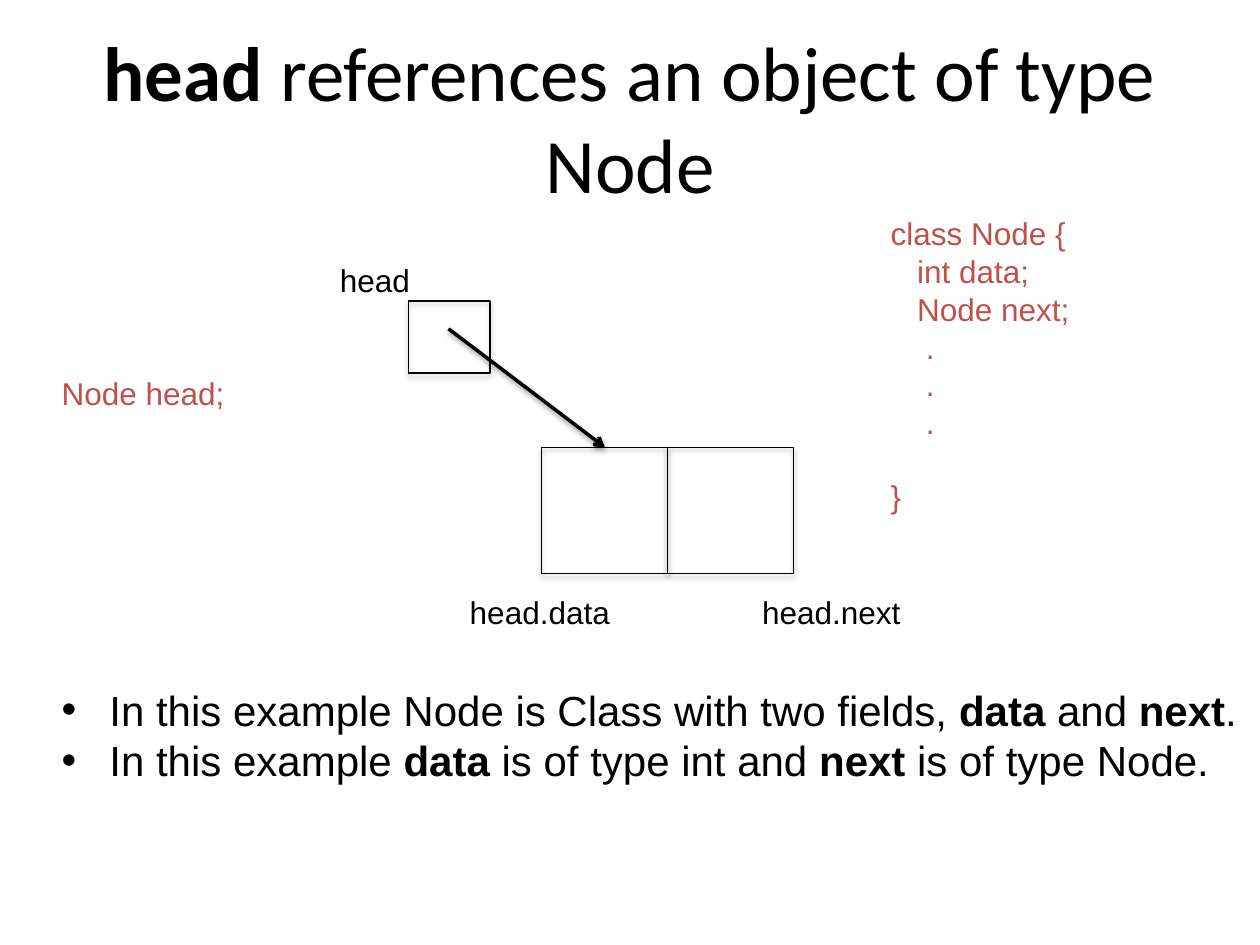
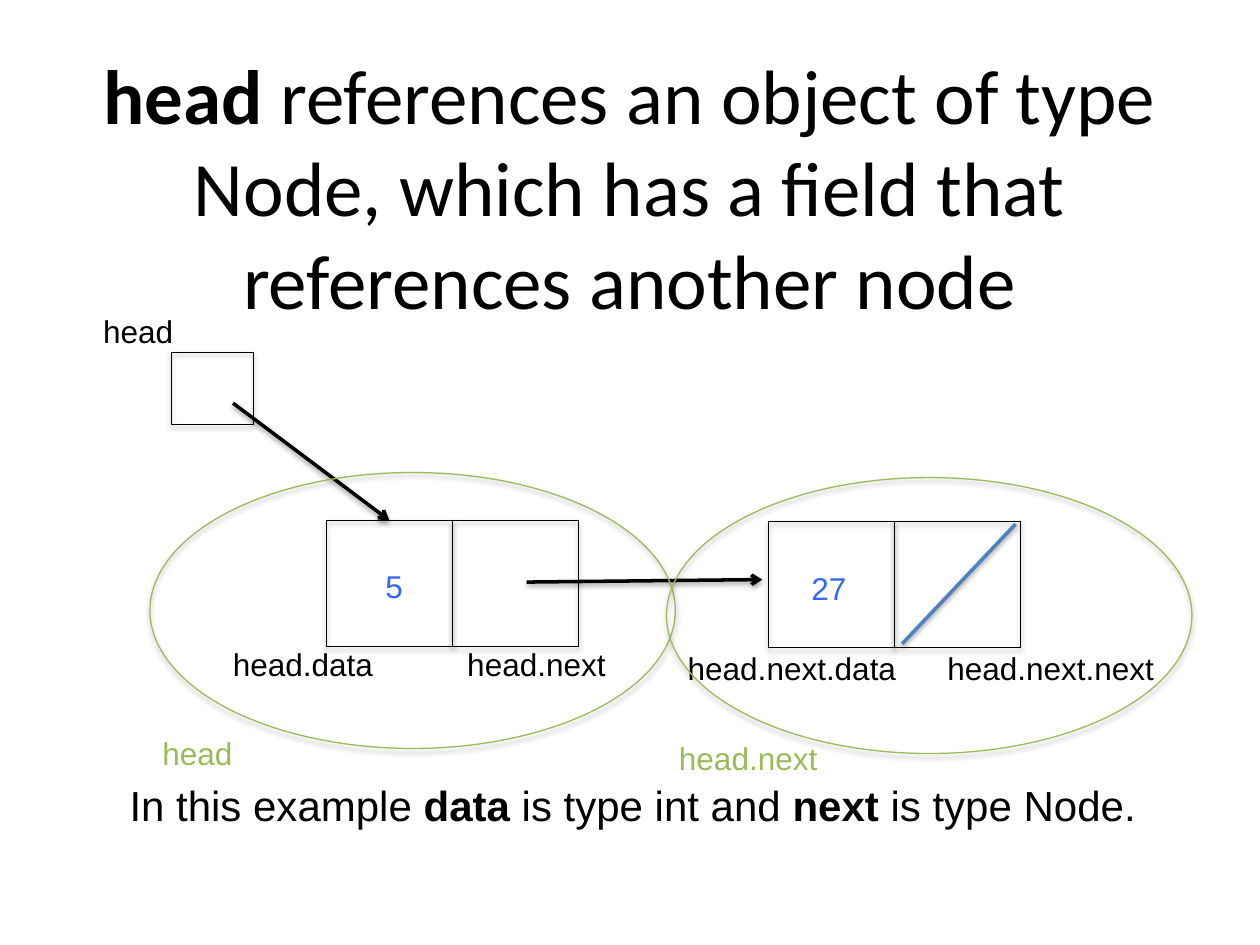
from dataclasses import dataclass

from lxml import etree
from pptx import Presentation
from pptx import util as u
from pptx.dml import color
from pptx.enum import shapes, text
from pptx.oxml import ns


@dataclass(frozen=True)
class Theme:
    ink: str = "000000"
    code: str = "C0504D"
    value: str = "3366FF"
    group: str = "9BBB59"
    null: str = "4F81BD"
    title_font: str = "Calibri"
    body_font: str = "Arial"
    title_size: int = 44
    note_size: int = 24
    label_size: int = 18
    outline: float = 0.75
    stroke: float = 2
    cell: float = 1
    box_shadow: tuple = (35, 1.8)
    line_shadow: tuple = (38, 1.6)
    blur: float = 3.1


THEME = Theme()


def assign(target, values):
    for name, value in values.items():
        setattr(target, name, value)


def rgb(value):
    return color.RGBColor.from_string(value)


def child(parent, tag, **attributes):
    element = etree.SubElement(parent, ns.qn(tag))
    for name, value in attributes.items():
        element.set(name, str(value))
    return element


def style_line(shape, ink, width, shadow):
    opacity, distance = shadow
    shape.line.color.rgb = rgb(ink)
    shape.line.width = u.Pt(width)
    effects = child(shape._element.spPr, "a:effectLst")
    outer = child(effects, "a:outerShdw", blurRad=u.Pt(THEME.blur),
                  dist=u.Pt(distance), dir=90 * 60000, rotWithShape=0)
    child(child(outer, "a:srgbClr", val=THEME.ink), "a:alpha", val=opacity * 1000)


def add_outline(page, left, top, width, height, ink=THEME.ink,
                kind=shapes.MSO_SHAPE.RECTANGLE):
    shape = page.shapes.add_shape(kind, *map(u.Inches, (left, top, width, height)))
    shape.fill.background()
    style_line(shape, ink, THEME.outline, THEME.box_shadow)


def add_node(page, left, top):
    for column in range(2):
        add_outline(page, left + column * THEME.cell, top, THEME.cell, THEME.cell)


def add_head_cell(page, left, top):
    add_outline(page, left, top, 0.65, 0.57)
    add_text(page, left - 0.64, top - 0.37, 0.76, 0.4, ["head"])


def add_group(page, left, top, name, width):
    add_outline(page, left, top, 4.17, 2.19, THEME.group, shapes.MSO_SHAPE.OVAL)
    add_text(page, left, top + 2.03, width, 0.4, [name], ink=THEME.group)


def add_line(page, start, end, ink=THEME.ink, arrow=True):
    line = page.shapes.add_connector(
        shapes.MSO_CONNECTOR.STRAIGHT, *map(u.Inches, (*start, *end)))
    style_line(line, ink, THEME.stroke, THEME.line_shadow)
    if arrow:
        child(line._element.spPr.find(ns.qn("a:ln")), "a:tailEnd", type="arrow")


def add_spans(para, content, ink, size, font):
    for index, part in enumerate(content.split("*")):
        if part:
            span = para.add_run()
            span.text = part
            assign(span.font, {"name": font, "size": u.Pt(size), "bold": index % 2 == 1})
            span.font.color.rgb = rgb(ink)


def add_text(page, left, top, width, height, lines, ink=THEME.ink,
             size=THEME.label_size, font=THEME.body_font, **frame_format):
    box = page.shapes.add_textbox(*map(u.Inches, (left, top, width, height)))
    frame = box.text_frame
    assign(frame, {"word_wrap": False,
                   "auto_size": text.MSO_AUTO_SIZE.SHAPE_TO_FIT_TEXT, **frame_format})
    for index, content in enumerate(lines):
        para = frame.add_paragraph() if index else frame.paragraphs[0]
        add_spans(para, content, ink, size, font)
    return frame.paragraphs


def indent(para, margin, first=0):
    properties = para._p.get_or_add_pPr()
    properties.set("marL", str(u.Inches(margin)))
    properties.set("indent", str(u.Inches(first)))
    return properties


def add_title(page, top, content):
    paras = add_text(page, 0.5, top, 9, 1.25, [content], size=THEME.title_size,
                     font=THEME.title_font, word_wrap=True,
                     auto_size=text.MSO_AUTO_SIZE.NONE,
                     vertical_anchor=text.MSO_ANCHOR.MIDDLE)
    paras[0].alignment = text.PP_ALIGN.CENTER


def add_bullets(page, left, top, width, height, lines):
    for para in add_text(page, left, top, width, height, lines, size=THEME.note_size):
        properties = indent(para, 0.38, -0.38)
        child(properties, "a:buFont", typeface=THEME.body_font)
        child(properties, "a:buChar", char="•")


def add_class_code(page, left, top):
    fields = ["int data;", "Node next;"]
    dots = ["."] * 3
    paras = add_text(page, left, top, 2.12, 2.52,
                     ["class Node {", *fields, *dots, "}"],
                     ink=THEME.code, word_wrap=True)
    margins = [0, *[0.21] * len(fields), *[0.28] * len(dots), 0]
    for para, margin in zip(paras, margins):
        indent(para, margin)
    paras[-1].space_before = u.Pt(20.7)


def build_single_node(page):
    add_title(page, 0.3, "*head* references an object of type Node")
    add_node(page, 4.3, 3.55)
    add_line(page, (3.56, 2.61), (4.8, 3.55))
    add_head_cell(page, 3.24, 2.39)
    add_bullets(page, 0.39, 5.38, 9.58, 0.91, [
        "In this example Node is Class with two fields, *data* and *next*.",
        "In this example *data* is of type int and *next* is of type Node.",
    ])
    add_text(page, 3.63, 4.66, 1.33, 0.4, ["head.data"])
    add_text(page, 5.95, 4.66, 1.31, 0.4, ["head.next"])
    add_class_code(page, 6.97, 1.65)
    add_text(page, 0.39, 2.92, 1.51, 0.4, ["Node head;"], ink=THEME.code)


def build_linked_nodes(page):
    add_title(page, 0.85, "*head* references an object of type Node, "
                          "which has a field that references another node")
    add_node(page, 6.1, 4.14)
    add_line(page, (4.18, 4.62), (6.05, 4.6))
    add_head_cell(page, 1.36, 2.8)
    add_text(page, 0.93, 6.14, 8.27, 0.51,
             ["In this example *data* is type int and *next* is type Node."],
             size=THEME.note_size)
    add_node(page, 2.59, 4.13)
    add_line(page, (1.85, 3.2), (3.09, 4.13))
    for left, top, width, name in [
        (1.75, 5.07, 1.32, "head.data"),
        (3.61, 5.07, 1.31, "head.next"),
        (5.36, 5.1, 1.87, "head.next.data"),
        (7.42, 5.1, 1.86, "head.next.next"),
    ]:
        add_text(page, left, top, width, 0.4, [name])
    add_line(page, (8.06, 4.16), (7.16, 5.11), THEME.null, arrow=False)
    add_text(page, 2.96, 4.45, 0.34, 0.4, ["5"], ink=THEME.value)
    add_text(page, 6.34, 4.47, 0.48, 0.4, ["27"], ink=THEME.value)
    add_group(page, 1.19, 3.75, "head", 0.76)
    add_group(page, 5.29, 3.79, "head.next", 1.31)


def main():
    deck = Presentation()
    assign(deck, {"slide_width": u.Inches(10), "slide_height": u.Inches(7.5)})
    for build in (build_single_node, build_linked_nodes):
        build(deck.slides.add_slide(deck.slide_layouts[6]))
    deck.save("out.pptx")


if __name__ == "__main__":
    main()
